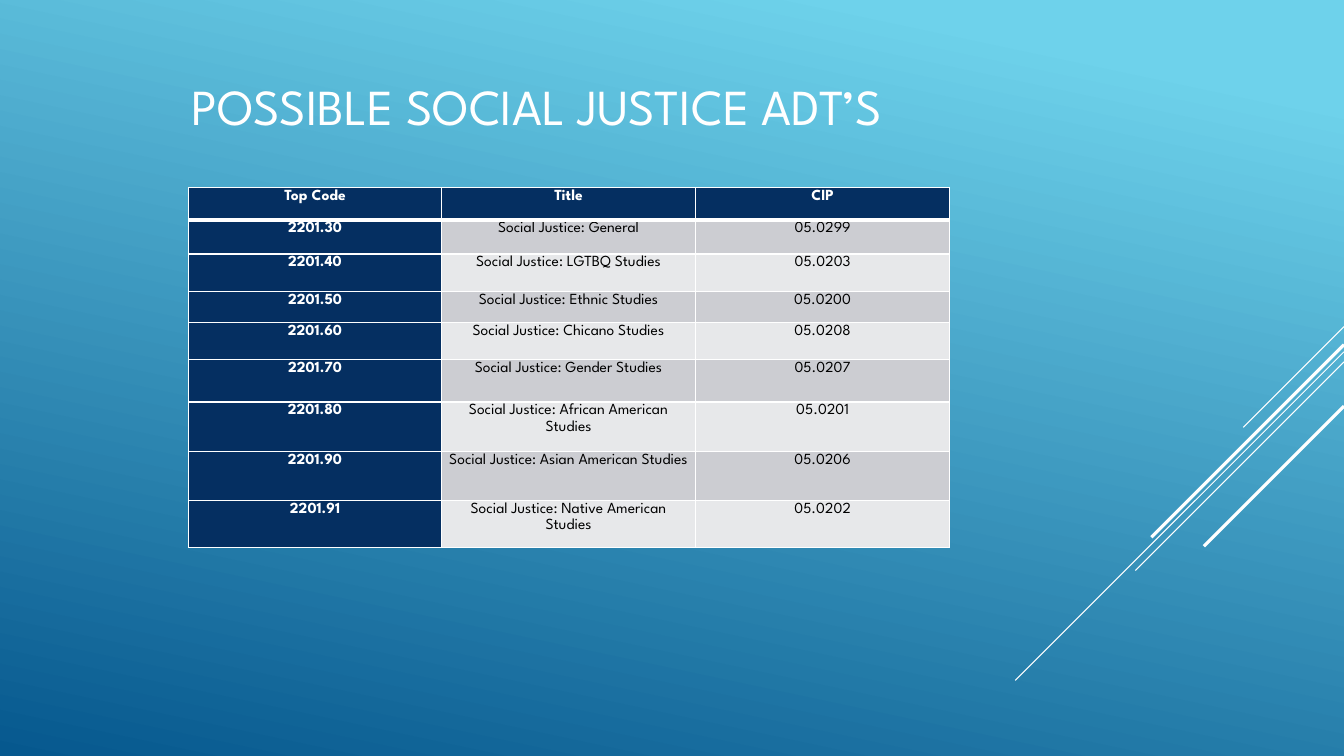
from typing import NamedTuple

from lxml.etree import SubElement
from pptx import Presentation
from pptx.dml.color import RGBColor
from pptx.enum.shapes import MSO_CONNECTOR as Connector
from pptx.enum.text import MSO_ANCHOR as Anchor, PP_ALIGN as Align
from pptx.oxml import parse_xml
from pptx.oxml.ns import nsdecls, qn
from pptx.slide import Slide
from pptx.table import _Cell as Cell
from pptx.text.text import _Paragraph as Paragraph
from pptx.util import Pt

PX = 9144  # EMU per px, 100 px to the inch
FONT = "League Spartan"
COLOURS = {
    "sky": "6ED2EB",
    "deep": "06588E",
    "navy": "052F61",
    "odd": "CCCDD2",
    "even": "E7E8EA",
    "white": "FFFFFF",
    "black": "000000",
}


class Ray(NamedTuple):
    top: int  # height at which the ray meets the right edge
    run: int  # distance covered, both leftwards and downwards
    weight: float


class Course(NamedTuple):
    code: str
    title: str
    cip: str
    height: int


PAGE_WIDTH, PAGE_HEIGHT = 1333, 750
RAYS = [
    Ray(324, 100, 0.75),
    Ray(349, 326, 0.75),
    Ray(359, 207, 0.75),
    Ray(342, 191, 2.25),
    Ray(403, 139, 2.25),
]
COLUMN_WIDTHS = [251, 252, 252]
COURSES = [
    Course("Top Code", "Title", "CIP", 32),
    Course("2201.30", "Social Justice: General", "05.0299", 34),
    Course("2201.40", "Social Justice: LGTBQ Studies", "05.0203", 37),
    Course("2201.50", "Social Justice: Ethnic Studies", "05.0200", 31),
    Course("2201.60", "Social Justice: Chicano Studies", "05.0208", 37),
    Course("2201.70", "Social Justice: Gender Studies", "05.0207", 42),
    Course("2201.80", "Social Justice: African American Studies", "05.0201", 49),
    Course("2201.90", "Social Justice: Asian American Studies", "05.0206", 49),
    Course("2201.91", "Social Justice: Native American Studies", "05.0202", 46),
]


def px(length: int) -> int:
    return length * PX


def colour(name: str) -> RGBColor:
    return RGBColor.from_string(COLOURS[name])


def add_run(para: Paragraph, text: str, size: int, ink: str, bold: bool = False) -> None:
    run = para.add_run()
    run.text = text
    run.font.name = FONT
    run.font.size = Pt(size)
    run.font.bold = bold
    run.font.color.rgb = colour(ink)


def paint_background(page: Slide) -> None:
    fill = page.background.fill
    fill.gradient()
    fill.gradient_angle = 258
    for stop, position, name in zip(fill.gradient_stops, (0.1, 1), ("sky", "deep")):
        stop.position = position
        stop.color.rgb = colour(name)


def add_ray(page: Slide, ray: Ray) -> None:
    line = page.shapes.add_connector(
        Connector.STRAIGHT,
        px(PAGE_WIDTH), px(ray.top), px(PAGE_WIDTH - ray.run), px(ray.top + ray.run),
    )
    line.line.color.rgb = colour("white")
    line.line.width = Pt(ray.weight)
    SubElement(line._element.spPr, qn("a:effectLst"))


def add_title(page: Slide, text: str) -> None:
    box = page.shapes.add_textbox(px(180), px(22), px(933), px(165))
    frame = box.text_frame
    frame.word_wrap = True
    frame.vertical_anchor = Anchor.MIDDLE
    add_run(frame.paragraphs[0], text, 36, "white")


def set_borders(cell: Cell, top: int, bottom: int) -> None:
    properties = cell._tc.get_or_add_tcPr()
    weights = {"lnL": 1, "lnR": 1, "lnT": top, "lnB": bottom}
    for index, (side, weight) in enumerate(weights.items()):
        properties.insert(index, parse_xml(
            f'<a:{side} {nsdecls("a")} w="{Pt(weight)}"><a:solidFill>'
            f'<a:srgbClr val="{COLOURS["white"]}"/></a:solidFill></a:{side}>'
        ))


def fill_cell(cell: Cell, text: str, row: int, column: int) -> None:
    heading = row == 0 or column == 0
    cell.fill.solid()
    cell.fill.fore_color.rgb = colour("navy" if heading else "odd" if row % 2 else "even")
    cell.margin_left = cell.margin_right = px(7)
    cell.margin_top = cell.margin_bottom = 0
    set_borders(cell, top=3 if row == 1 else 1, bottom=3 if row == 0 else 1)
    para = cell.text_frame.paragraphs[0]
    para.alignment = Align.CENTER
    para.line_spacing = 1.15
    para.space_after = Pt(10)
    add_run(para, text, 11, "white" if heading else "black", heading)


def add_course_table(page: Slide) -> None:
    height = sum(course.height for course in COURSES)
    table = page.shapes.add_table(
        len(COURSES), len(COLUMN_WIDTHS),
        px(187), px(186), px(sum(COLUMN_WIDTHS)), px(height),
    ).table
    table.first_row = table.horz_banding = False
    for column, width in zip(table.columns, COLUMN_WIDTHS):
        column.width = px(width)
    for row, course in enumerate(COURSES):
        table.rows[row].height = px(course.height)
        for column, text in enumerate((course.code, course.title, course.cip)):
            fill_cell(table.cell(row, column), text, row, column)


def main() -> None:
    deck = Presentation()
    deck.slide_width, deck.slide_height = px(PAGE_WIDTH), px(PAGE_HEIGHT)
    page = deck.slides.add_slide(deck.slide_layouts[6])

    # Backdrop
    paint_background(page)
    for ray in RAYS:
        add_ray(page, ray)

    # Content
    add_title(page, "POSSIBLE SOCIAL JUSTICE ADT’S")
    add_course_table(page)

    deck.save("out.pptx")


if __name__ == "__main__":
    main()
